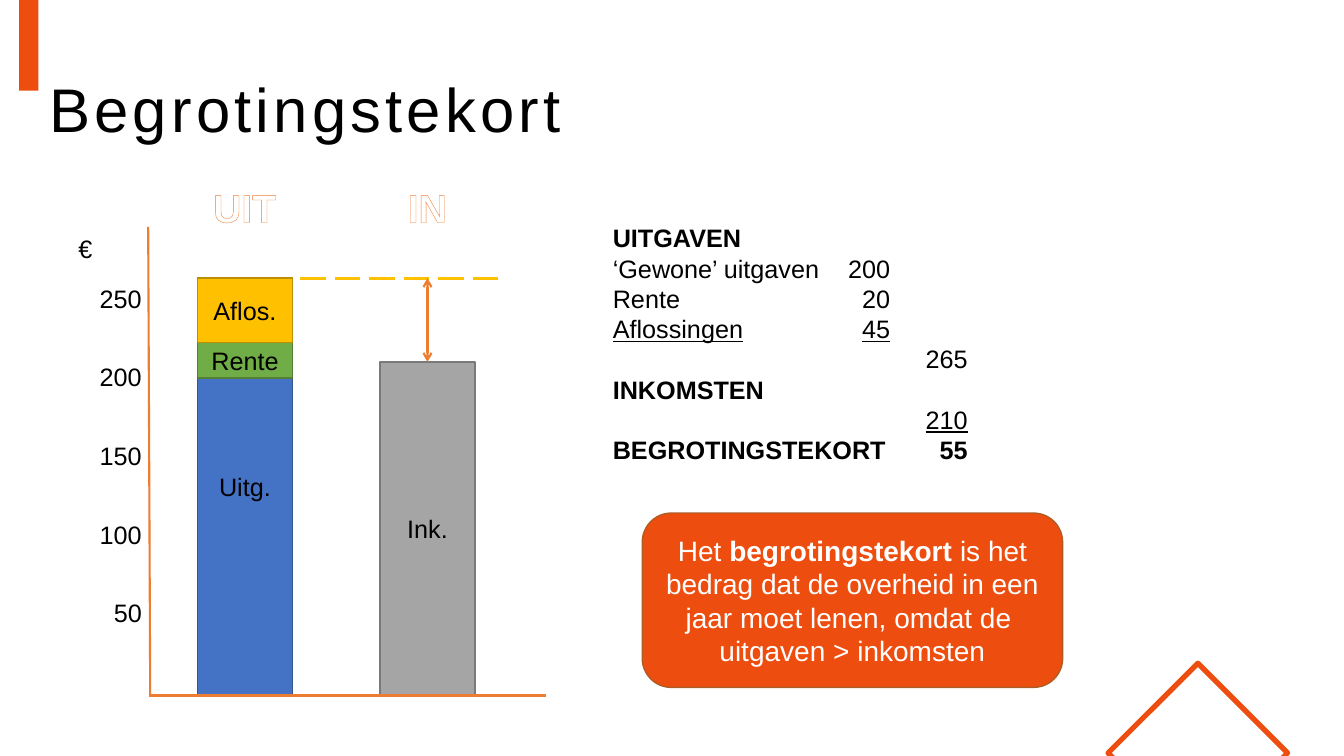
from collections import namedtuple

from lxml.etree import SubElement
from pptx import Presentation
from pptx.dml.color import RGBColor
from pptx.enum.dml import MSO_LINE_DASH_STYLE as Dash
from pptx.enum.shapes import MSO_CONNECTOR as Connector, MSO_SHAPE as Shape
from pptx.enum.text import MSO_ANCHOR as Anchor, MSO_AUTO_SIZE as AutoSize, PP_ALIGN as Align
from pptx.oxml.ns import qn
from pptx.util import Inches, Pt

BLACK = RGBColor(0x00, 0x00, 0x00)
WHITE = RGBColor(0xFF, 0xFF, 0xFF)
BRAND = RGBColor(0xED, 0x4D, 0x0F)
BRAND_EDGE = RGBColor(0xAF, 0x5C, 0x24)
ORANGE = RGBColor(0xED, 0x7D, 0x31)
BLUE = RGBColor(0x44, 0x72, 0xC4)
BLUE_EDGE = RGBColor(0x32, 0x54, 0x91)
GRAY = RGBColor(0xA5, 0xA5, 0xA5)
GRAY_EDGE = RGBColor(0x7A, 0x7A, 0x7A)
GREEN = RGBColor(0x70, 0xAD, 0x47)
GREEN_EDGE = RGBColor(0x53, 0x80, 0x35)
GOLD = RGBColor(0xFF, 0xC0, 0x00)
GOLD_EDGE = RGBColor(0xBD, 0x8E, 0x00)

Box = namedtuple("Box", "left top width height")


def inches(box):
    """Convert a box in inches to slide lengths."""
    return [Inches(value) for value in box]


def add_span(para, text, size=18, color=BLACK, bold=False, underline=False):
    """Append a formatted run to a paragraph."""
    span = para.add_run()
    span.text = text
    font = span.font
    font.name, font.size, font.bold = "Arial", Pt(size), bold
    font.underline = underline
    font.color.rgb = color
    return span


def add_text(page, box, wrap=False):
    """Add a text box and return its text frame."""
    frame = page.shapes.add_textbox(*inches(box)).text_frame
    frame.word_wrap = wrap
    frame.auto_size = AutoSize.SHAPE_TO_FIT_TEXT
    return frame


def add_block(page, kind, box, fill, edge=None):
    """Add a filled shape and return its centred text frame."""
    shape = page.shapes.add_shape(kind, *inches(box))
    shape.shadow.inherit = False
    shape.fill.solid()
    shape.fill.fore_color.rgb = fill
    if edge is None:
        shape.line.fill.background()
    else:
        shape.line.color.rgb = edge
        shape.line.width = Pt(1)
    frame = shape.text_frame
    frame.word_wrap = True
    frame.vertical_anchor = Anchor.MIDDLE
    frame.paragraphs[0].alignment = Align.CENTER
    return frame


def add_line(page, start, end, color=ORANGE, width=1.5):
    """Add a straight line without a shadow."""
    line = page.shapes.add_connector(Connector.STRAIGHT, *inches(start + end))
    line.line.color.rgb = color
    line.line.width = Pt(width)
    SubElement(line._element.spPr, qn("a:effectLst"))
    return line.line


def add_decoration(page, box):
    """Draw the corner bar and the clipped diamond of the page."""
    add_block(page, Shape.RECTANGLE, Box(box.left + 0.19, box.top - 0.25, 0.19, 1.15), BRAND)
    center, apex, half, floor = box.left + 11.88, box.top + 6.58, 0.89, box.height + 0.06
    shoulder = apex + half
    inset = half - (floor - shoulder)
    points = [(center - inset, floor), (center - half, shoulder), (center, apex),
              (center + half, shoulder), (center + inset, floor)]
    corners = [(Inches(x), Inches(y)) for x, y in points]
    builder = page.shapes.build_freeform(*corners[0])
    builder.add_line_segments(corners[1:], close=True)
    diamond = builder.convert_to_shape()
    diamond.shadow.inherit = False
    diamond.fill.background()
    diamond.line.color.rgb = BRAND
    diamond.line.width = Pt(3.75)


def add_title(page, box):
    """Write the letter-spaced title."""
    frame = add_text(page, box, wrap=True)
    frame.auto_size = AutoSize.NONE
    frame.vertical_anchor = Anchor.MIDDLE
    para = frame.paragraphs[0]
    para.line_spacing = 0.9
    span = add_span(para, "Begrotingstekort", size=44)
    span.font._element.set("spc", "300")


def add_heading(page, box, text):
    """Write an outlined column heading."""
    span = add_span(add_text(page, box).paragraphs[0], text, size=28, color=WHITE, bold=True)
    properties = span.font._element
    outline = SubElement(properties, qn("a:ln"), w=str(Pt(0.52)))
    fill = SubElement(outline, qn("a:solidFill"))
    SubElement(fill, qn("a:srgbClr"), val=str(ORANGE))
    properties.insert(0, outline)


def add_budget_bars(page, box):
    """Draw the axes, the stacked bars and the gap between them."""
    left, top = box.left, box.top
    floor, right = top + box.height, left + box.width
    axis = left + 0.8
    out_left, in_left, bar_width = left + 1.28, left + 3.09, 0.94
    out_top, interest_top, costs_top, in_top = top + 0.99, top + 1.63, top + 1.98, top + 1.82

    add_line(page, (axis - 0.01, top + 0.48), (axis + 0.01, floor))
    for step in range(5):
        value = 50 * (step + 1)
        width = 0.48 if value < 100 else 0.62
        label = Box(axis + 0.03 - width, floor - 1.02 - 0.78 * step, width, 0.4)
        add_span(add_text(page, label).paragraphs[0], str(value))
    add_span(add_text(page, Box(left, top + 0.5, 0.34, 0.4)).paragraphs[0], "€")

    for text, center, width in (("UIT", out_left + 0.47, 0.83), ("IN", in_left + 0.47, 0.59)):
        add_heading(page, Box(center - width / 2, top, width, 0.57), text)

    bars = [
        ("Uitg.", out_left, out_top, floor, BLUE, BLUE_EDGE),
        ("Ink.", in_left, in_top, floor, GRAY, GRAY_EDGE),
        ("Rente", out_left, interest_top, costs_top, GREEN, GREEN_EDGE),
        ("Aflos.", out_left, out_top, interest_top, GOLD, GOLD_EDGE),
    ]
    for text, bar_left, bar_top, bottom, fill, edge in bars:
        bar = Box(bar_left, bar_top, bar_width, bottom - bar_top)
        add_span(add_block(page, Shape.RECTANGLE, bar, fill, edge).paragraphs[0], text)

    level = add_line(page, (left + 2.3, out_top), (left + 4.27, out_top), GOLD, 2.25)
    level.dash_style = Dash.LONG_DASH
    middle = in_left + bar_width / 2
    gap = add_line(page, (middle, out_top), (middle, in_top))
    for end in ("a:headEnd", "a:tailEnd"):
        SubElement(gap._get_or_add_ln(), qn(end), type="arrow")
    add_line(page, (axis, floor), (right, floor))


def add_statement(page, box):
    """List spending and income in tabbed columns."""
    rows = [
        [("UITGAVEN", True, False)],
        [("‘Gewone’ uitgaven\t200", False, False)],
        [("Rente\t20", False, False)],
        [("Aflossingen\t45", False, True)],
        [("\t\t265", False, False)],
        [("INKOMSTEN", True, False)],
        [("\t\t", True, False), ("210", False, True)],
        [("BEGROTINGSTEKORT\t\t55", True, False)],
    ]
    frame = add_text(page, box, wrap=True)
    for index, row in enumerate(rows):
        para = frame.add_paragraph() if index else frame.paragraphs[0]
        tabs = SubElement(para._element.get_or_add_pPr(), qn("a:tabLst"))
        for stop in (2.75, 3.52):
            SubElement(tabs, qn("a:tab"), pos=str(Inches(stop)), algn="r")
        for text, bold, underline in row:
            add_span(para, text, bold=bold, underline=underline)


def add_definition(page, box):
    """Explain the deficit in a rounded panel."""
    frame = add_block(page, Shape.ROUNDED_RECTANGLE, box, BRAND, BRAND_EDGE)
    para = frame.paragraphs[0]
    add_span(para, "Het ", 20, WHITE)
    add_span(para, "begrotingstekort", 20, WHITE, bold=True)
    add_span(para, " is het bedrag dat de overheid in een jaar moet lenen, omdat de ", 20, WHITE)
    para = frame.add_paragraph()
    para.alignment = Align.CENTER
    add_span(para, "uitgaven > inkomsten", 20, WHITE)


def main():
    """Build and save the deck."""
    deck = Presentation()
    deck.slide_width, deck.slide_height = Inches(13.33), Inches(7.5)
    page = deck.slides.add_slide(deck.slide_layouts[6])
    add_decoration(page, Box(0, 0, 13.33, 7.5))
    add_title(page, Box(0.39, 0.39, 12.61, 1.45))
    add_budget_bars(page, Box(0.68, 1.77, 4.74, 5.13))
    add_statement(page, Box(5.98, 2.16, 4.57, 2.52))
    add_definition(page, Box(6.37, 5.09, 4.17, 1.73))
    deck.save("out.pptx")


if __name__ == "__main__":
    main()
